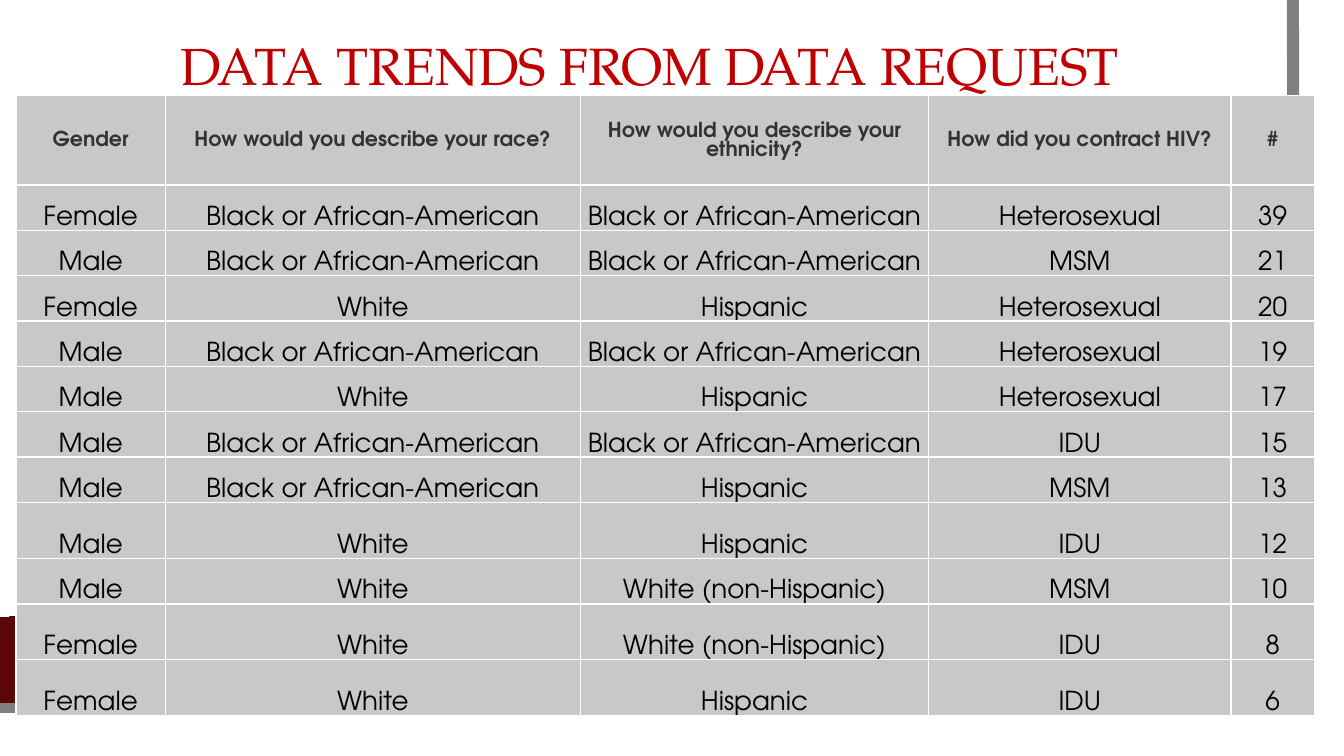
from typing import NamedTuple

from lxml.etree import SubElement
from pptx import Presentation
from pptx.dml.color import RGBColor
from pptx.enum.shapes import MSO_SHAPE
from pptx.enum.text import MSO_ANCHOR, PP_ALIGN
from pptx.oxml.ns import qn
from pptx.util import Inches, Pt

WHITE = RGBColor(0xFF, 0xFF, 0xFF)
BLACK = RGBColor(0, 0, 0)
DARK = RGBColor(0x33, 0x33, 0x33)
GRAY = RGBColor(0x80, 0x80, 0x80)
SILVER = RGBColor(0xC8, 0xC8, 0xC8)
CRIMSON = RGBColor(0xC0, 0, 0)
RED = RGBColor(0xB8, 0x0E, 0x0F)
MAROON = RGBColor(0x5C, 0x07, 0x07)

SERIF = "TeX Gyre Pagella"
SANS = "TeX Gyre Adventor"

WIDTHS = (1.11, 3.09, 2.59, 2.25, 0.62)
HEAD_ROW, ROW, TALL_ROW = Pt(48), Pt(24.3), Pt(30)
TALL = {"12", "8", "6"}


class Box(NamedTuple):
    left: float
    top: float
    width: float
    height: float

    def emu(self) -> list[int]:
        return [Inches(n) for n in self]


class Group(NamedTuple):
    gender: str
    race: str
    ethnic: str
    cause: str
    count: str


AFRICAN = "Black or African-American"
HEADS = Group("Gender", "How would you describe your race?",
              "How would you describe your ethnicity?",
              "How did you contract HIV?", "#")
GROUPS = [
    Group("Female", AFRICAN, AFRICAN, "Heterosexual", "39"),
    Group("Male", AFRICAN, AFRICAN, "MSM", "21"),
    Group("Female", "White", "Hispanic", "Heterosexual", "20"),
    Group("Male", AFRICAN, AFRICAN, "Heterosexual", "19"),
    Group("Male", "White", "Hispanic", "Heterosexual", "17"),
    Group("Male", AFRICAN, AFRICAN, "IDU", "15"),
    Group("Male", AFRICAN, "Hispanic", "MSM", "13"),
    Group("Male", "White", "Hispanic", "IDU", "12"),
    Group("Male", "White", "White (non-Hispanic)", "MSM", "10"),
    Group("Female", "White", "White (non-Hispanic)", "IDU", "8"),
    Group("Female", "White", "Hispanic", "IDU", "6"),
]


def write(frame, text: str, *, font: str, size: int, color: RGBColor,
          bold: bool = False, pitch: float | None = None) -> None:
    """Put one centred paragraph in the frame; pitch is the line height in points."""
    frame.word_wrap = True
    para = frame.paragraphs[0]
    para.alignment = PP_ALIGN.CENTER
    if pitch:
        para.line_spacing = Pt(pitch)
    run = para.add_run()
    run.text = text
    run.font.name = font
    run.font.size = Pt(size)
    run.font.bold = bold
    run.font.color.rgb = color


def add_rect(slide, box: Box):
    rect = slide.shapes.add_shape(MSO_SHAPE.RECTANGLE, *box.emu())
    rect.shadow.inherit = False
    rect.line.fill.background()
    return rect


def shade(shape) -> None:
    """Fill with a round gradient, red in the middle and maroon outside."""
    shape.fill.gradient()
    stops = shape.fill.gradient_stops
    for stop, color, place in zip(stops, (RED, MAROON), (0.34, 1)):
        stop.color.rgb = color
        stop.position = place
    grad = shape.element.spPr.find(qn("a:gradFill"))
    grad.remove(grad.find(qn("a:lin")))
    ring = SubElement(grad, qn("a:path"), {"path": "circle"})
    SubElement(ring, qn("a:fillToRect"), dict.fromkeys("ltrb", "50000"))


def add_edge(slide) -> None:
    """Draw the gray line down the right side and along the bottom."""
    build = slide.shapes.build_freeform(Inches(9.62), 0)
    build.add_line_segments([(Inches(9.64), Inches(5.27)),
                             (Inches(-0.02), Inches(5.26))], close=False)
    edge = build.convert_to_shape()
    edge.shadow.inherit = False
    edge.fill.background()
    edge.line.color.rgb = GRAY
    edge.line.width = Pt(6.5)


def add_borders(cell) -> None:
    props = cell._tc.get_or_add_tcPr()
    for spot, side in enumerate(("lnL", "lnR", "lnT", "lnB")):
        line = SubElement(props, qn(f"a:{side}"), {"w": str(Pt(1))})
        solid = SubElement(line, qn("a:solidFill"))
        SubElement(solid, qn("a:srgbClr"), {"val": str(WHITE)})
        props.insert(spot, line)


def add_cell(cell, text: str, head: bool) -> None:
    cell.fill.solid()
    cell.fill.fore_color.rgb = SILVER
    cell.margin_left = cell.margin_right = cell.margin_top = Inches(0.01)
    cell.margin_bottom = 0
    cell.vertical_anchor = MSO_ANCHOR.MIDDLE if head else MSO_ANCHOR.BOTTOM
    look = (dict(size=11, color=DARK, bold=True, pitch=10.2) if head
            else dict(size=14, color=BLACK))
    write(cell.text_frame, text, font=SANS, **look)
    add_borders(cell)


def add_grid(slide, left: float, top: float) -> None:
    rows = [HEADS, *GROUPS]
    highs = [HEAD_ROW] + [TALL_ROW if g.count in TALL else ROW for g in GROUPS]
    table = slide.shapes.add_table(len(rows), len(WIDTHS), Inches(left), Inches(top),
                                   Inches(sum(WIDTHS)), sum(highs)).table
    for col, width in zip(table.columns, WIDTHS):
        col.width = Inches(width)
    for r, (row, high) in enumerate(zip(rows, highs)):
        table.rows[r].height = high
        for c, text in enumerate(row):
            add_cell(table.cell(r, c), text, head=r == 0)


def main() -> None:
    deck = Presentation()
    deck.slide_width = Inches(10)
    deck.slide_height = deck.slide_width * 9 // 16
    slide = deck.slides.add_slide(deck.slide_layouts[6])

    page = add_rect(slide, Box(0, 0, 9.83, 5.45))
    page.fill.solid()
    page.fill.fore_color.rgb = WHITE
    add_edge(slide)
    shade(add_rect(slide, Box(0, 4.59, 9.6, 0.64)))

    title = slide.shapes.add_textbox(*Box(0.91, 0.2, 7.85, 0.57).emu())
    write(title.text_frame, "DATA TRENDS FROM DATA REQUEST",
          font=SERIF, size=28, color=CRIMSON)
    add_grid(slide, 0.12, 0.71)
    deck.save("out.pptx")


if __name__ == "__main__":
    main()
